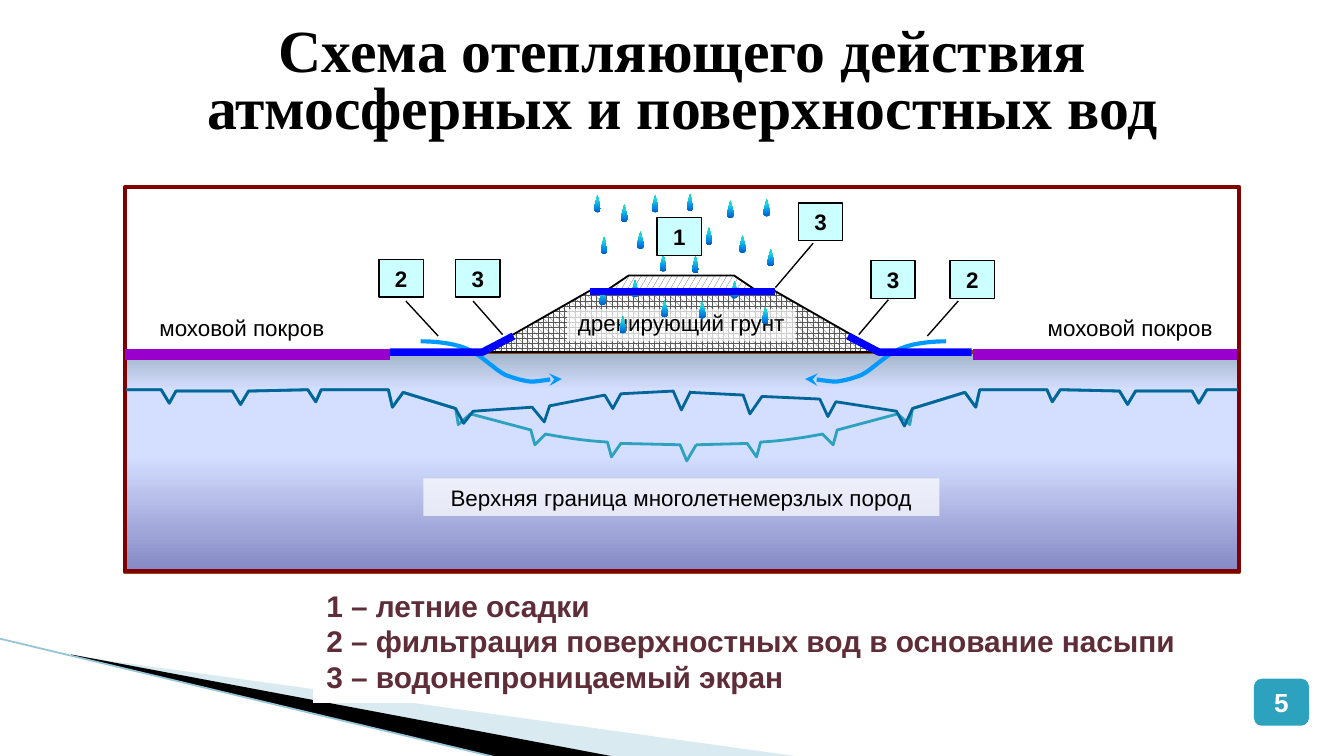
from lxml.etree import SubElement
from pptx import Presentation
from pptx.dml.color import RGBColor
from pptx.enum.dml import MSO_PATTERN as Pat
from pptx.enum.shapes import MSO_CONNECTOR as Conn, MSO_SHAPE as Form
from pptx.enum.text import MSO_ANCHOR as Anchor, MSO_AUTO_SIZE as Auto, PP_ALIGN as Align
from pptx.oxml.ns import qn
from pptx.util import Cm, Pt


def cm(inch):
    return Cm(inch * 2.54)


def rgb(code):
    return RGBColor.from_string(code)


def bend(a, b, c, d, steps=8):
    for i in range(1, steps + 1):
        t = i / steps
        s = 1 - t
        yield tuple(s**3 * p + 3 * s * s * t * q + 3 * s * t * t * r + t**3 * e
                    for p, q, r, e in zip(a, b, c, d))


def flip(points, axis=10.18, edge=9.21):
    return [tuple(min(axis - v, edge) if i % 2 == 0 else v for i, v in enumerate(p))
            for p in points]


class Pen:
    """Draws styled elements on the current slide, with lengths in inches."""

    def __init__(self, slide, face="Arial"):
        self.slide = slide
        self.face = face

    def paint(self, shape, fill=None, line=None, alpha=None):
        shape.shadow.inherit = False
        if fill is None:
            shape.fill.background()
        elif isinstance(fill, str):
            shape.fill.solid()
            shape.fill.fore_color.rgb = rgb(fill)
            if alpha:
                tint = shape.element.spPr.find(qn("a:solidFill"))[0]
                SubElement(tint, qn("a:alpha"), val=str(alpha * 1000))
        else:
            self.blend(shape, *fill)
        self.edge(shape, line)
        return shape

    def edge(self, shape, line):
        if line is None:
            shape.line.fill.background()
        else:
            shape.line.color.rgb = rgb(line[0])
            shape.line.width = Pt(line[1])

    def blend(self, shape, angle, stops):
        shape.fill.gradient()
        shape.fill.gradient_angle = angle
        ramp = shape.element.spPr.find(qn("a:gradFill")).find(qn("a:gsLst"))
        for old in list(ramp):
            ramp.remove(old)
        for pos, code in stops:
            stop = SubElement(ramp, qn("a:gs"), pos=str(pos * 1000))
            SubElement(stop, qn("a:srgbClr"), val=code)

    def box(self, at, fill=None, line=None, alpha=None, form=Form.RECTANGLE):
        shape = self.slide.shapes.add_shape(form, *map(cm, at))
        return self.paint(shape, fill, line, alpha)

    def bank(self, at, slope, pattern):
        shape = self.box(at, line=("000000", 1), form=Form.TRAPEZOID)
        shape.adjustments[0] = slope
        shape.fill.patterned()
        shape.fill.pattern = pattern
        shape.fill.fore_color.rgb = rgb("595959")
        shape.fill.back_color.rgb = rgb("FFFFFF")

    def text(self, shape, rows, size=12, color="000000", bold=False, face=None,
             align=Align.CENTER, pads=(0.04,) * 4, lead=None, anchor=Anchor.TOP,
             grow=True):
        frame = shape.text_frame
        frame.word_wrap = True
        frame.auto_size = Auto.SHAPE_TO_FIT_TEXT if grow else Auto.NONE
        frame.vertical_anchor = anchor
        (frame.margin_left, frame.margin_top,
         frame.margin_right, frame.margin_bottom) = map(cm, pads)
        for i, row in enumerate(rows):
            para = frame.add_paragraph() if i else frame.paragraphs[0]
            para.alignment = align
            if lead:
                para.line_spacing = lead
            run = para.add_run()
            run.text = row
            font = run.font
            font.name = face or self.face
            font.size = Pt(size)
            font.bold = bold
            font.color.rgb = rgb(color)

    def title(self, at, row):
        shape = self.slide.shapes.add_textbox(*map(cm, at))
        self.text(shape, [row], 32, bold=True, face="Times New Roman",
                  pads=(0.1, 0.05, 0.1, 0.05), lead=0.8)

    def tag(self, mark, x, y):
        shape = self.box((x, y, 0.33, 0.28), "CCFFFF", ("000000", 0.75))
        self.text(shape, [mark], bold=True)

    def line(self, start, end, color="000000", width=0.75):
        link = self.slide.shapes.add_connector(Conn.STRAIGHT, *map(cm, start + end))
        self.edge(link, (color, width))
        SubElement(link.element.spPr, qn("a:effectLst"))

    def free(self, points, fill=None, line=None, alpha=None, close=False, arrow=False):
        dots = [points[0]]
        for p in points[1:]:
            if len(p) == 6:
                dots += bend(dots[-1], p[:2], p[2:4], p[4:])
            else:
                dots.append(p)
        dots = [(cm(x), cm(y)) for x, y in dots]
        maker = self.slide.shapes.build_freeform(*dots[0], scale=1.0)
        maker.add_line_segments(dots[1:], close=close)
        shape = self.paint(maker.convert_to_shape(), fill, line, alpha)
        if arrow:
            SubElement(shape.element.spPr.find(qn("a:ln")), qn("a:tailEnd"), type="stealth")

    def drop(self, x, y):
        tip = (x + 0.025, y)
        self.free([tip, (x, y + 0.1),
                   (x, y + 0.12, x + 0.015, y + 0.13, x + 0.025, y + 0.13),
                   (x + 0.035, y + 0.13, x + 0.05, y + 0.12, x + 0.05, y + 0.1)],
                  (270, WATER), close=True)


WATER = [(0, "03D4A8"), (25, "21D6E0"), (75, "0087E6"), (100, "005CBF")]
SOIL = [(0, "8488C4"), (53, "D4DEFF"), (83, "D4DEFF"), (100, "A1B4C7")]
BLUE = ("0000FF", 4)

deck = Presentation()
deck.slide_width, deck.slide_height = cm(10), cm(10 * 9 / 16)
pen = Pen(deck.slides.add_slide(deck.slide_layouts[6]))

pen.free([(0.55, 4.88), (5.95, 5.63), (4.56, 5.63)], "A0CBDC", alpha=40, close=True)
pen.free([(0.53, 4.87), (4.57, 5.63), (3.72, 5.64), (0.54, 4.88)], "000000", close=True)
pen.line((-0.01, 4.75), (3.71, 5.64), "97C5D8", 0.95)
pen.title((0.59, 0.15, 8.98, 0.96),
          "Схема отепляющего действия атмосферных и поверхностных вод")
page = pen.box((9.33, 5.05, 0.41, 0.35), "2DA2BF", form=Form.ROUNDED_RECTANGLE)
pen.text(page, ["5"], 14, "FFFFFF", True, anchor=Anchor.MIDDLE, grow=False)

pen.bank((4.5, 2.05, 1.14, 0.12), 1.48, Pat.LARGE_CONFETTI)
pen.box((0.93, 2.62, 8.29, 1.64), (90, SOIL), ("984807", 2))
pen.line((7.24, 2.64), (9.21, 2.64), "9900CC", 6)
pen.box((0.93, 1.39, 8.29, 2.86), line=("800000", 2))
pen.bank((3.59, 2.16, 2.97, 0.46), 1.75, Pat.SPHERE)
pen.line((0.93, 2.64), (2.9, 2.64), "9900CC", 6)
fill = pen.box((4.22, 2.3, 1.7, 0.24), "FFFFFF", alpha=70)
pen.text(fill, ["дренирующий грунт"], pads=(0.04, 0, 0.04, 0.04))

flow = [(3.13, 2.54), (3.22, 2.54, 3.36, 2.55, 3.46, 2.59),
        (3.57, 2.63, 3.68, 2.75, 3.76, 2.79), (3.84, 2.82, 3.88, 2.83, 3.95, 2.84),
        (4.02, 2.84, 4.14, 2.81, 4.18, 2.82)]
for side in (flow, flip(flow, 10.17)):
    pen.free(side, line=("0099FF", 2.25), arrow=True)

for x, y in [(4.92, 2.23), (5.2, 2.24), (5.44, 2.09), (4.46, 2.14), (4.7, 2.08),
             (4.61, 2.35), (5.67, 2.28)]:
    pen.drop(x, y)

shore = [(0.94, 2.9), (1.2, 2.9), (1.26, 3), (1.31, 2.91), (1.73, 2.91), (1.79, 3.01),
         (1.85, 2.91), (2.29, 2.9), (2.35, 2.99), (2.39, 2.9), (2.89, 2.9),
         (2.92, 3.03), (3, 2.92), (3.39, 3.04)]
deep = shore + [(3.41, 3.16), (3.5, 3.08), (3.95, 3.2), (3.98, 3.31), (4.06, 3.23),
                (4.16, 3.25, 4.34, 3.28, 4.52, 3.29), (4.55, 3.4), (4.62, 3.3)]
pen.free(deep + [(5.06, 3.31), (5.11, 3.43), (5.18, 3.31)], line=("2CA2BE", 1.5))
pen.free(flip(deep) + [(5.18, 3.31)], line=("2CA2BE", 1.5))

pen.tag("2", 7.07, 1.94)
pen.line((6.9, 2.5), (7.13, 2.24))
key = pen.box((2.33, 4.32, 6.93, 0.91), "FFFFFF")
pen.text(key, ["1 – летние осадки",
               "2 – фильтрация поверхностных вод в основание насыпи",
               "3 – водонепроницаемый экран"],
         16, "5E2D37", True, align=Align.LEFT, pads=(0.1, 0.05, 0.1, 0.05))
pen.tag("2", 2.82, 1.93)
pen.line((3.26, 2.5), (3.02, 2.24))
frost = pen.box((3.15, 3.56, 3.84, 0.28), "FFFFFF", alpha=70)
pen.text(frost, ["Верхняя граница многолетнемерзлых пород"])
for x in (1.07, 7.68):
    pen.text(pen.box((x, 2.3, 1.46, 0.28), "FFFFFF"), ["моховой покров"])

for x, y in [(4.62, 1.52), (4.74, 1.72), (4.91, 1.89), (4.85, 1.45), (5.15, 1.9),
             (5.11, 1.44), (5.25, 1.69), (5.71, 1.85), (4.42, 1.45), (4.47, 1.76),
             (5.41, 1.49), (5.5, 1.75), (5.68, 1.48)]:
    pen.drop(x, y)
pen.tag("1", 4.89, 1.62)

pen.line((4.39, 2.17), (5.77, 2.17), *BLUE)
screen = [(2.9, 2.62), (3.59, 2.62), (3.82, 2.5)]
for side in (screen, flip(screen, 10.13)):
    pen.free(side, line=BLUE)

pen.free(shore + [(3.45, 3.15), (3.52, 3.06), (3.96, 3.03), (4.05, 3.14), (4.09, 3.02),
                  (4.5, 2.94), (4.56, 3.04), (4.62, 2.93), (5.01, 2.91), (5.07, 3.05),
                  (5.14, 2.91)], line=("006699", 1.5))
pen.free(flip(shore) + [(6.73, 3.17), (6.67, 3.06), (6.22, 2.99), (6.16, 3.1),
                        (6.1, 2.97), (5.67, 2.95), (5.58, 3.08), (5.53, 2.94),
                        (5.13, 2.92)], line=("006699", 1.5))

for x, y, start, end in [(6.48, 1.94, (6.39, 2.49), (6.61, 2.23)),
                         (5.94, 1.51, (5.77, 2.14), (6.05, 1.81)),
                         (3.39, 1.93, (3.74, 2.49), (3.52, 2.24))]:
    pen.tag("3", x, y)
    pen.line(start, end)

deck.save("out.pptx")
